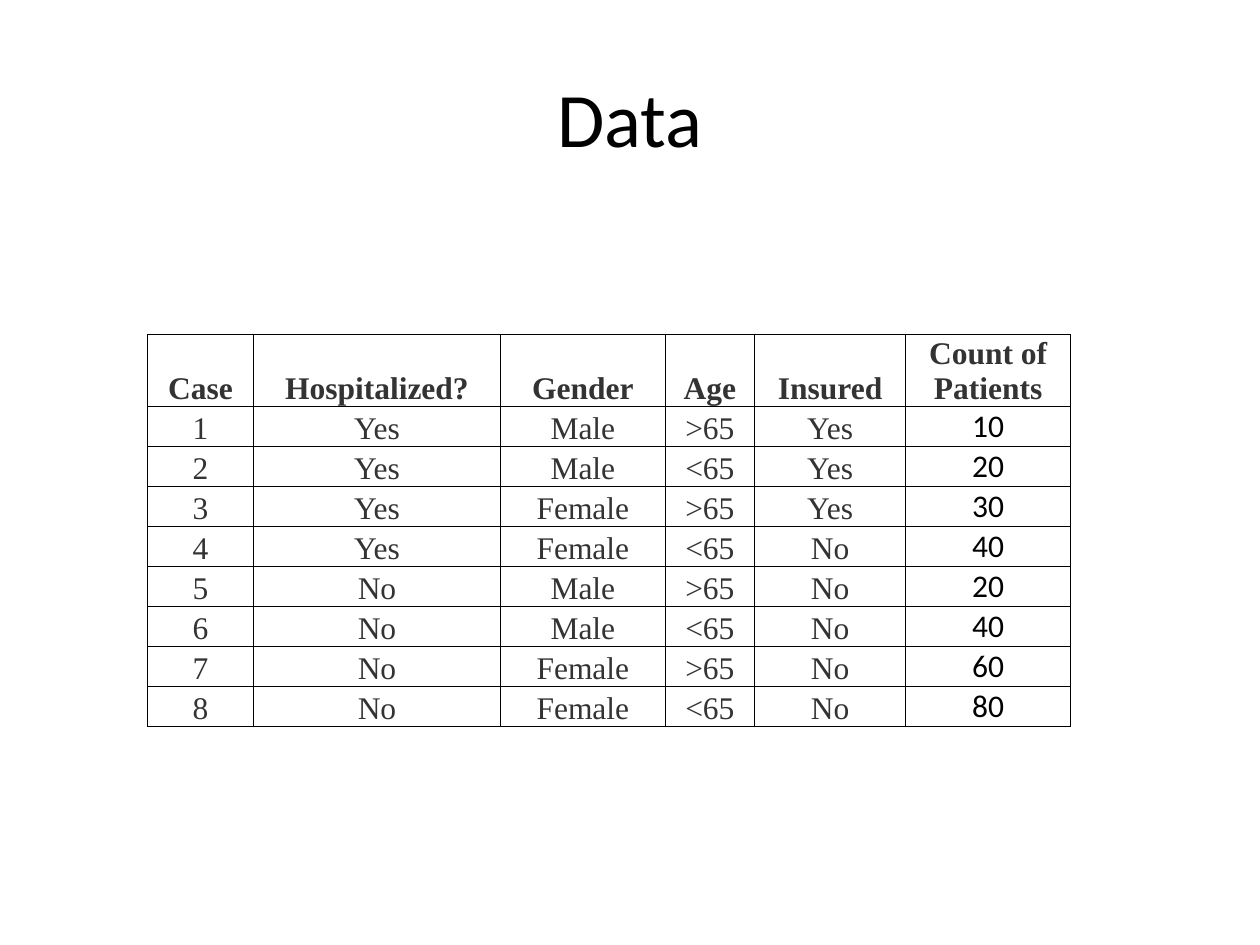
from dataclasses import dataclass
from lxml.etree import SubElement
from pptx import Presentation
from pptx.dml.color import RGBColor
from pptx.enum.text import MSO_ANCHOR, PP_ALIGN
from pptx.oxml.ns import qn
from pptx.util import Cm, Pt


@dataclass(frozen=True)
class Theme:
    sans: str = "Calibri"
    serif: str = "Times New Roman"
    ink: str = "000000"
    gray: str = "333333"
    head: int = 44
    body: int = 18
    rule: float = 0.5


HEADS = ["Case", "Hospitalized?", "Gender", "Age", "Insured", "Count of Patients"]
CASES = [
    ["1", "Yes", "Male", ">65", "Yes", "10"],
    ["2", "Yes", "Male", "<65", "Yes", "20"],
    ["3", "Yes", "Female", ">65", "Yes", "30"],
    ["4", "Yes", "Female", "<65", "No", "40"],
    ["5", "No", "Male", ">65", "No", "20"],
    ["6", "No", "Male", "<65", "No", "40"],
    ["7", "No", "Female", ">65", "No", "60"],
    ["8", "No", "Female", "<65", "No", "80"],
]
WIDTHS = [2.14, 4.98, 3.32, 1.8, 3.05, 3.32]
TALL, ROW = 1.43, 0.8


class Page:
    def __init__(self, deck, theme):
        self.theme = theme
        self.slide = deck.slides.add_slide(deck.slide_layouts[5])

    def label(self, frame, text, size, font, color, bold=False):
        para = frame.paragraphs[0]
        para.alignment = PP_ALIGN.CENTER
        run = para.add_run()
        run.text = text
        run.font.size = Pt(size)
        run.font.name = font
        run.font.bold = bold
        run.font.color.rgb = RGBColor.from_string(color)

    def title(self, text, left, top, width, height):
        shape = self.slide.shapes.title
        shape.left, shape.top = Cm(left), Cm(top)
        shape.width, shape.height = Cm(width), Cm(height)
        shape.text_frame.vertical_anchor = MSO_ANCHOR.MIDDLE
        look = self.theme
        self.label(shape.text_frame, text, look.head, look.sans, look.ink)

    def border(self, cell):
        props = cell._tc.get_or_add_tcPr()
        for spot, side in enumerate(("a:lnL", "a:lnR", "a:lnT", "a:lnB")):
            line = SubElement(props, qn(side), w=str(Pt(self.theme.rule)))
            props.insert(spot, line)
            fill = SubElement(line, qn("a:solidFill"))
            SubElement(fill, qn("a:srgbClr"), val=self.theme.ink)

    def cell(self, cell, text, font, color, bold):
        cell.fill.background()
        cell.vertical_anchor = MSO_ANCHOR.BOTTOM
        cell.margin_left = cell.margin_right = cell.margin_top = Cm(0.03)
        cell.margin_bottom = Cm(0)
        self.border(cell)
        self.label(cell.text_frame, text, self.theme.body, font, color, bold)

    def table(self, rows, left, top, widths, tall, row):
        highs = [tall] + [row] * (len(rows) - 1)
        grid = self.slide.shapes.add_table(
            len(rows), len(widths), Cm(left), Cm(top), Cm(sum(widths)), Cm(sum(highs))
        ).table
        grid.horz_banding = False
        for col, width in zip(grid.columns, widths):
            col.width = Cm(width)
        for line, high in zip(grid.rows, highs):
            line.height = Cm(high)
        look = self.theme
        last = len(widths) - 1
        for r, texts in enumerate(rows):
            for c, text in enumerate(texts):
                count = r > 0 and c == last
                font, color = (look.sans, look.ink) if count else (look.serif, look.gray)
                self.cell(grid.cell(r, c), text, font, color, r == 0)


def main():
    deck = Presentation()
    deck.slide_width, deck.slide_height = Cm(25.4), Cm(19.05)
    page = Page(deck, Theme())
    page.title("Data", 1.27, 0.76, 22.86, 3.18)
    page.table([HEADS] + CASES, 2.97, 6.75, WIDTHS, TALL, ROW)
    deck.save("out.pptx")


if __name__ == "__main__":
    main()
